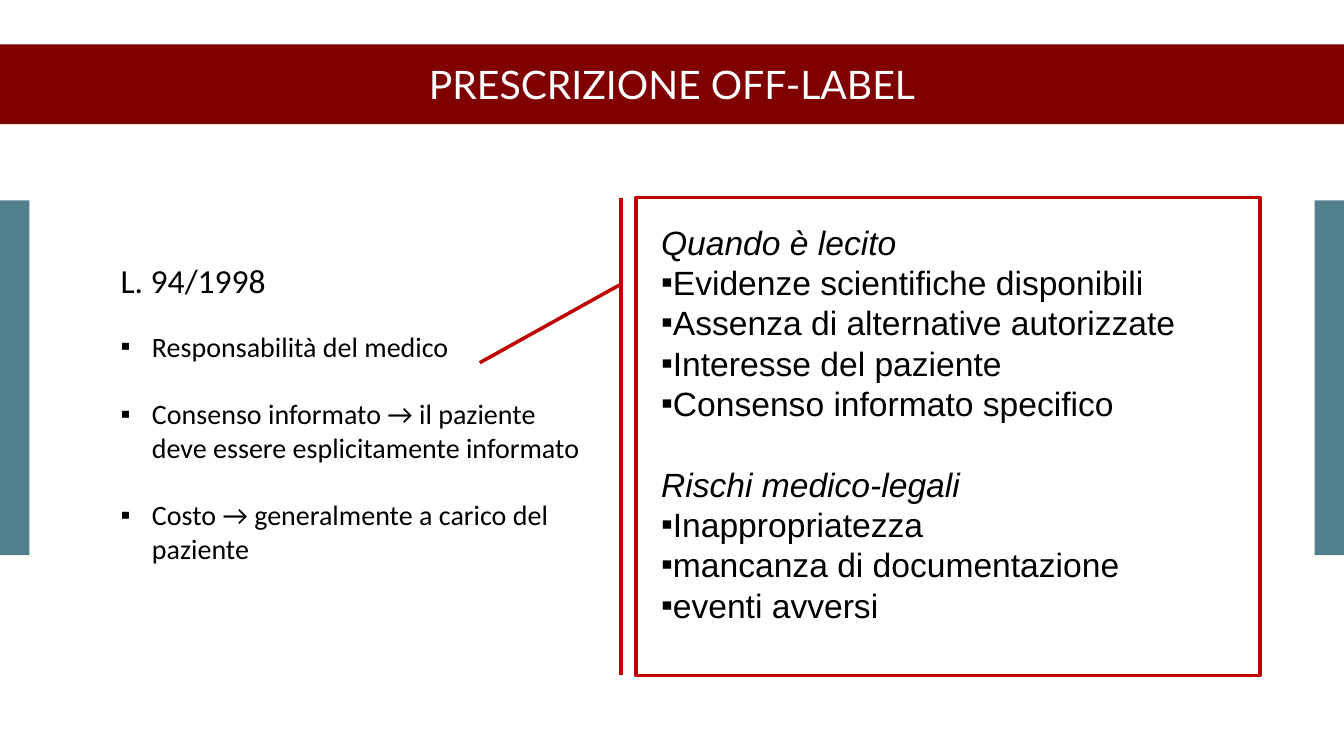
from lxml import etree
from pptx import Presentation
from pptx.dml.color import RGBColor
from pptx.enum import shapes, text
from pptx.oxml import ns
from pptx.util import Cm, Pt

WIDE, TALL = 33.87, 19.05
RED, WINE, TEAL, BLACK, WHITE = "C00000", "800000", "52808D", "000000", "FFFFFF"

DUTIES = [
    "Responsabilità del medico",
    "Consenso informato → il paziente deve essere esplicitamente informato",
    "Costo → generalmente a carico del paziente",
]
CASES = {
    "Quando è lecito": [
        "Evidenze scientifiche disponibili",
        "Assenza di alternative autorizzate",
        "Interesse del paziente",
        "Consenso informato specifico",
    ],
    "Rischi medico-legali": [
        "Inappropriatezza",
        "mancanza di documentazione",
        "eventi avversi",
    ],
}


def color(code):
    return RGBColor.from_string(code)


def style(item, **values):
    for name, value in values.items():
        setattr(item, name, value)


def block(slide, place, fill=None, line=None):
    shape = slide.shapes.add_shape(shapes.MSO_SHAPE.RECTANGLE, *map(Cm, place))
    shape.shadow.inherit = False
    if fill:
        shape.fill.solid()
        shape.fill.fore_color.rgb = color(fill)
    else:
        shape.fill.background()
    if line:
        shape.line.color.rgb = color(line)
        shape.line.width = Pt(2.5)
    else:
        shape.line.fill.background()
    return shape


def stroke(slide, *ends):
    line = slide.shapes.add_connector(shapes.MSO_CONNECTOR.STRAIGHT, *map(Cm, ends))
    line.line.color.rgb = color(RED)
    line.line.width = Pt(2.5)
    etree.SubElement(line._element.spPr, ns.qn("a:effectLst"))


def box(slide, place):
    frame = slide.shapes.add_textbox(*map(Cm, place)).text_frame
    frame.word_wrap = True
    return frame


def bullet(para, hang):
    props = para._p.get_or_add_pPr()
    props.set("marL", str(Cm(hang)))
    props.set("indent", str(-Cm(hang)))
    etree.SubElement(props, ns.qn("a:buFont")).set("typeface", "Arial")
    etree.SubElement(props, ns.qn("a:buChar")).set("char", "▪")


def write(frame, words, face, size, ink=BLACK, hang=None, slant=False, **form):
    first = not frame.paragraphs[0].runs
    para = frame.paragraphs[0] if first else frame.add_paragraph()
    if hang is not None:
        bullet(para, hang)
    if first:
        form.pop("space_before", None)
    style(para, **form)
    run = para.add_run()
    run.text = words
    style(run.font, name=face, size=Pt(size), italic=slant)
    run.font.color.rgb = color(ink)


def header(slide):
    frame = block(slide, (0, 1.12, WIDE, 2.01), WINE).text_frame
    style(frame, vertical_anchor=text.MSO_ANCHOR.MIDDLE, word_wrap=True)
    write(frame, "PRESCRIZIONE OFF-LABEL", "Lato", 28, WHITE,
          alignment=text.PP_ALIGN.CENTER)


def law(slide):
    write(box(slide, (2.79, 6.43, 4.67, 1.27)), "L. 94/1998", "Calibri", 24)
    frame = box(slide, (2.79, 8.18, 12.14, 6.25))
    for duty in DUTIES:
        write(frame, duty, "Calibri", 20, hang=0.79, space_before=Pt(24))


def callout(slide):
    left, top, high, bar = 16.03, 4.98, 12.04, 15.65
    block(slide, (left, top, 15.72, high), line=RED)
    stroke(slide, bar, top, bar, top + high)
    stroke(slide, bar, 7.16, 12.09, 9.14)
    frame = box(slide, (16.41, 5.46, 14.94, 10.52))
    pitch = Pt(28.8)
    for head, points in CASES.items():
        write(frame, head, "Arial", 24, slant=True,
              line_spacing=pitch, space_before=pitch)
        for point in points:
            write(frame, point, "Arial", 24, hang=0, line_spacing=pitch)


def main():
    deck = Presentation()
    style(deck, slide_width=Cm(WIDE), slide_height=Cm(TALL))
    slide = deck.slides.add_slide(deck.slide_layouts[6])
    side = 0.74
    for left in (0, WIDE - side):
        block(slide, (left, 5.05, side, 8.94), TEAL)
    header(slide)
    law(slide)
    callout(slide)
    deck.save("out.pptx")


if __name__ == "__main__":
    main()
